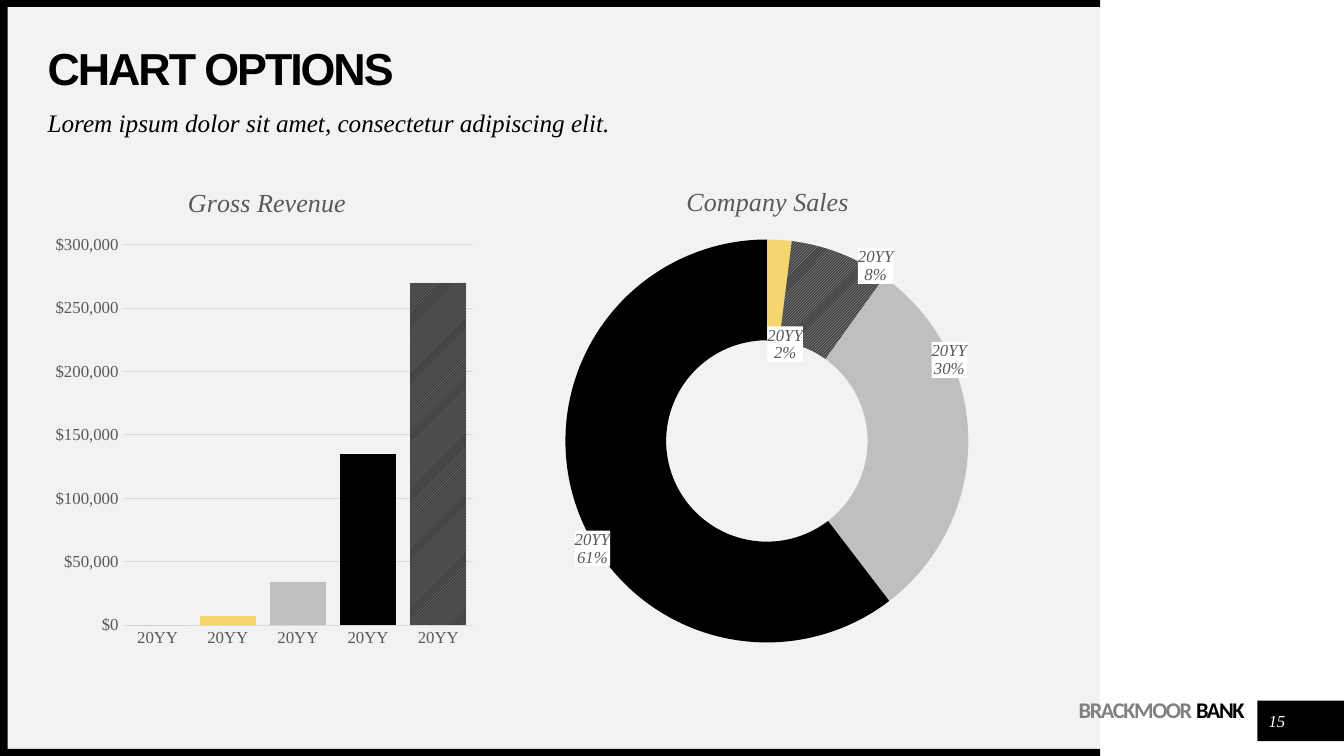
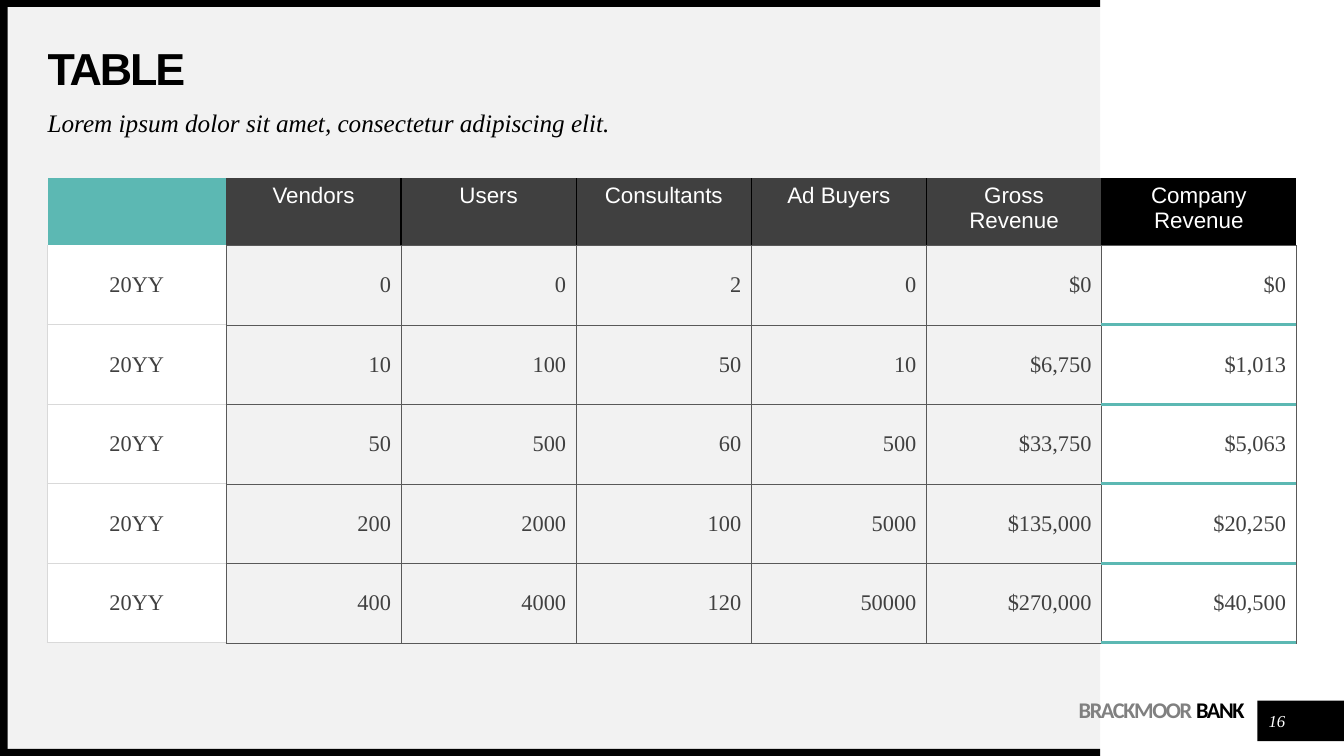
from typing import NamedTuple

from pptx import Presentation
from pptx import util as u
from pptx.chart import data
from pptx.dml.color import RGBColor
from pptx.enum import chart as charts
from pptx.enum import dml, shapes, text
from pptx.oxml import parse_xml
from pptx.oxml.ns import nsdecls, qn

SANS, SERIF, BRAND = "Arial", "Times New Roman", "Calibri"
BLACK, WHITE, PANEL, TEAL = "000000", "FFFFFF", "F2F2F2", "5CB8B3"
DARK, GREY, MID, RULE = "404040", "595959", "808080", "D9D9D9"
ROSE, YELLOW, SILVER = "D78189", "F5D66E", "BFBFBF"
LEFT, CENTER, RIGHT = text.PP_ALIGN.LEFT, text.PP_ALIGN.CENTER, text.PP_ALIGN.RIGHT
TOP, MIDDLE = text.MSO_ANCHOR.TOP, text.MSO_ANCHOR.MIDDLE
LEAD = "Lorem ipsum dolor sit amet, consectetur adipiscing elit."
YEARS = ["20YY"] * 5
NO_TABLE_STYLE = "{2D5ABB26-0587-4C30-8999-92F81FD0307C}"


class Area(NamedTuple):
    left: float
    top: float
    width: float
    height: float

    def points(self) -> list:
        return [u.Pt(length) for length in self]


class Band(NamedTuple):
    area: Area
    colour: str


class Hatch(NamedTuple):
    front: str
    back: str


class Border(NamedTuple):
    colour: str
    width: float


class ChartStyle(NamedTuple):
    kind: int
    title: str
    area: Area
    plot: Area  # fractions of the chart
    values: list
    number_format: str
    fills: list


BANDS = [
    Band(Area(5.5, 5, 780.3, 530), PANEL),
    Band(Area(898.2, 500.4, 61.8, 29), BLACK),
    Band(Area(0, 535, 785.8, 5), BLACK),
    Band(Area(0, 0, 785.8, 5), BLACK),
    Band(Area(0, 0, 5.5, 540), BLACK),
]

REVENUE = ChartStyle(
    charts.XL_CHART_TYPE.COLUMN_CLUSTERED, "Gross Revenue",
    Area(35, 119, 309.4, 348.5), Area(0.17, 0.16, 0.81, 0.78),
    [0, 7000, 34000, 135000, 270000], "[$$-409]#,##0",
    [ROSE, YELLOW, SILVER, BLACK, Hatch(MID, DARK)])
SALES = ChartStyle(
    charts.XL_CHART_TYPE.DOUGHNUT, "Company Sales",
    Area(387.8, 118.5, 320, 351), Area(0.05, 0.15, 0.9, 0.82),
    [0, 2, 8, 30, 61], r"0\%",
    [ROSE, YELLOW, Hatch(SILVER, DARK), SILVER, BLACK])
# Label shifts as fractions of the chart, by point
LABEL_SHIFTS = {1: (0.02, 0.11), 2: (0.12, -0.07), 3: (0.07, -0.16), 4: (-0.07, 0.12)}

HEADINGS = ["", "Vendors", "Users", "Consultants", "Ad Buyers",
            "Gross Revenue", "Company Revenue"]
ROWS = [
    HEADINGS,
    ["20YY", "0", "0", "2", "0", "$0", "$0"],
    ["20YY", "10", "100", "50", "10", "$6,750", "$1,013"],
    ["20YY", "50", "500", "60", "500", "$33,750", "$5,063"],
    ["20YY", "200", "2000", "100", "5000", "$135,000", "$20,250"],
    ["20YY", "400", "4000", "120", "50000", "$270,000", "$40,500"],
]
COLUMN_WIDTHS = [127.4] + [125.1] * 5 + [138.9]
ROW_HEIGHTS = [48] + [56.75] * 5
LAST = len(HEADINGS) - 1


# Text and fills
def rgb(colour: str) -> RGBColor:
    return RGBColor.from_string(colour)


def style(font, size: float, face: str, colour: str, bold=False, italic=False) -> None:
    font.size, font.name, font.bold, font.italic = u.Pt(size), face, bold, italic
    font.color.rgb = rgb(colour)


def write(para, words: str, *, size: float, face: str = SERIF, colour: str = BLACK,
          bold=False, italic=False, spacing: float = 0, align=LEFT) -> None:
    para.alignment = align
    span = para.add_run()
    span.text = words
    style(span.font, size, face, colour, bold, italic)
    if spacing:
        span.font._element.set("spc", str(int(spacing * 100)))


def add_text(page, area: Area, anchor=TOP, line=None, before: float = 0):
    frame = page.shapes.add_textbox(*area.points()).text_frame
    frame.margin_left = frame.margin_right = frame.margin_top = frame.margin_bottom = 0
    frame.word_wrap, frame.vertical_anchor = True, anchor
    para = frame.paragraphs[0]
    para.line_spacing, para.space_before = line, u.Pt(before)
    return para


def paint(fill, colour) -> None:
    if colour is None:
        fill.background()
    elif isinstance(colour, Hatch):
        fill.patterned()
        fill.pattern = dml.MSO_PATTERN.DARK_UPWARD_DIAGONAL
        fill.fore_color.rgb, fill.back_color.rgb = rgb(colour.front), rgb(colour.back)
    else:
        fill.solid()
        fill.fore_color.rgb = rgb(colour)


# Shared frame of every page
def add_page(deck, title: str, number: int):
    page = deck.slides.add_slide(deck.slide_layouts[6])
    for band in BANDS:
        box = page.shapes.add_shape(shapes.MSO_SHAPE.RECTANGLE, *band.area.points())
        box.shadow.inherit = False
        box.line.fill.background()
        paint(box.fill, band.colour)
    brand = add_text(page, Area(758, 502.6, 131, 28), line=u.Pt(14))
    for words, colour in (("BRACKMOOR ", MID), ("BANK", BLACK)):
        write(brand, words, size=16, face=BRAND, colour=colour, bold=True,
              spacing=-1, align=RIGHT)
    write(add_text(page, Area(34, 34, 724, 34), MIDDLE, 0.9), title,
          size=32, face=SANS, bold=True, spacing=-1.5)
    write(add_text(page, Area(34, 79, 724, 28), line=0.9, before=10), LEAD,
          size=18, italic=True)
    write(add_text(page, Area(901.4, 504, 21.6, 21.6), MIDDLE), str(number),
          size=12, colour=WHITE, italic=True, align=CENTER)
    return page


# Charts
def layout_xml(x: float, y: float, size: str = "", modes: str = "") -> str:
    return (f'<c:layout {nsdecls("c")}><c:manualLayout>{modes}'
            f'<c:x val="{x}"/><c:y val="{y}"/>{size}</c:manualLayout></c:layout>')


def set_layout(parent, index: int, x: float, y: float, size: str = "") -> None:
    for old in parent.findall(qn("c:layout")):
        parent.remove(old)
    target = '<c:layoutTarget val="inner"/>' if size else ""
    modes = target + '<c:xMode val="edge"/><c:yMode val="edge"/>'
    parent.insert(index, parse_xml(layout_xml(x, y, size, modes)))


def add_chart(page, look: ChartStyle):
    source = data.CategoryChartData(number_format=look.number_format)
    source.categories = YEARS
    source.add_series("Series 1", look.values)
    chart = page.shapes.add_chart(look.kind, *look.area.points(), source).chart
    chart.has_legend = False
    style(chart.font, 12, SERIF, GREY)
    chart.has_title = True
    write(chart.chart_title.text_frame.paragraphs[0], look.title,
          size=18.6, colour=GREY, italic=True, align=CENTER)
    set_layout(chart.chart_title._element, 1, 0.31, 0.03)
    plot = look.plot
    set_layout(chart._chartSpace.chart.plotArea, 0, plot.left, plot.top,
               f'<c:w val="{plot.width}"/><c:h val="{plot.height}"/>')
    series = chart.plots[0].series[0]
    for index, colour in enumerate(look.fills):
        look_of_point = series.points[index].format
        paint(look_of_point.fill, colour)
        look_of_point.line.fill.background()
    return chart


def style_line(line, colour: str) -> None:
    line.color.rgb, line.width = rgb(colour), u.Pt(0.75)


def add_revenue(page) -> None:
    chart = add_chart(page, REVENUE)
    chart.plots[0].gap_width = 25
    chart.plots[0].vary_by_categories = False
    for axis in (chart.category_axis, chart.value_axis):
        axis.major_tick_mark = axis.minor_tick_mark = charts.XL_TICK_MARK.NONE
        style(axis.tick_labels.font, 12, SERIF, GREY)
    style_line(chart.category_axis.format.line, RULE)
    amounts = chart.value_axis
    amounts.minimum_scale, amounts.maximum_scale, amounts.major_unit = 0, 300000, 50000
    amounts.tick_labels.number_format = REVENUE.number_format
    amounts.tick_labels.number_format_is_linked = False
    amounts.format.line.fill.background()
    style_line(amounts.major_gridlines.format.line, RULE)


def add_sales(page) -> None:
    chart = add_chart(page, SALES)
    chart._chartSpace.xpath("//c:holeSize")[0].set("val", "90")
    labels = chart.plots[0].series[0].data_labels
    labels.show_category_name = labels.show_value = True
    style(labels.font, 12, SERIF, GREY, italic=True)
    # No leader lines
    for old in labels._element.findall(qn("c:showLeaderLines")):
        labels._element.remove(old)
    labels._element.append(parse_xml(f'<c:showLeaderLines {nsdecls("c")} val="0"/>'))
    flags = "".join(
        f'<c:show{name} val="{shown}"/>' for name, shown in
        (("LegendKey", 0), ("Val", 1), ("CatName", 1), ("SerName", 0),
         ("Percent", 0), ("BubbleSize", 0)))
    font = (f'<a:defRPr sz="1200" i="1"><a:solidFill><a:srgbClr val="{GREY}"/></a:solidFill>'
            f'<a:latin typeface="{SERIF}"/></a:defRPr>')
    entries = ['<c:idx val="0"/><c:delete val="1"/>']
    for index, (x, y) in LABEL_SHIFTS.items():
        entries.append(
            f'<c:idx val="{index}"/>{layout_xml(x, y)}'
            f'<c:numFmt formatCode="{SALES.number_format}" sourceLinked="0"/>'
            f'<c:spPr><a:solidFill><a:srgbClr val="{WHITE}"/></a:solidFill></c:spPr>'
            f'<c:txPr><a:bodyPr/><a:p><a:pPr>{font}</a:pPr></a:p></c:txPr>'
            f'{flags}<c:separator>\n</c:separator>')
    for position, entry in enumerate(entries):
        label = parse_xml(f'<c:dLbl {nsdecls("c", "a")}>{entry}</c:dLbl>')
        labels._element.insert(position, label)


# Table
def borders_of(row: int, column: int) -> dict:
    thin, black = Border(GREY, 0.25), Border(BLACK, 1)
    pale, accent = Border(RULE, 1), Border(TEAL, 2.25)
    if row == 0:
        return {"L": black if column > 1 else None,
                "R": black if 0 < column < LAST else None,
                "T": None, "B": thin if column else None}
    if column == 0:
        return {"L": pale, "R": thin, "T": pale if row > 1 else None, "B": pale}
    if column == LAST:
        return {"L": thin, "R": thin, "T": accent if row > 1 else thin, "B": accent}
    return dict.fromkeys("LRTB", thin)


def fill_of(row: int, column: int):
    if row == 0:
        return {0: TEAL, LAST: BLACK}.get(column, DARK)
    return {0: WHITE, LAST - 1: PANEL}.get(column)


def set_borders(cell, borders: dict) -> None:
    props = cell._tc.get_or_add_tcPr()
    for position, (side, border) in enumerate(borders.items()):
        width = f' w="{int(u.Pt(border.width))}"' if border else ""
        ink = (f'<a:solidFill><a:srgbClr val="{border.colour}"/></a:solidFill>'
               if border else "<a:noFill/>")
        props.insert(position, parse_xml(
            f'<a:ln{side} {nsdecls("a")}{width}>{ink}</a:ln{side}>'))


def add_figures(page) -> None:
    area = Area(34, 127.3, sum(COLUMN_WIDTHS), sum(ROW_HEIGHTS))
    table = page.shapes.add_table(len(ROWS), len(HEADINGS), *area.points()).table
    table._tbl.tblPr.find(qn("a:tableStyleId")).text = NO_TABLE_STYLE
    table.horz_banding = False
    for column, width in zip(table.columns, COLUMN_WIDTHS):
        column.width = u.Pt(width)
    for row, (line, height) in enumerate(zip(ROWS, ROW_HEIGHTS)):
        table.rows[row].height = u.Pt(height)
        for column, words in enumerate(line):
            cell = table.cell(row, column)
            paint(cell.fill, fill_of(row, column))
            set_borders(cell, borders_of(row, column))
            cell.vertical_anchor = MIDDLE if row else TOP
            if words:
                write(cell.text_frame.paragraphs[0], words, size=16,
                      face=SERIF if row else SANS, colour=DARK if row else WHITE,
                      align=RIGHT if row and column else CENTER)


def main() -> None:
    deck = Presentation()
    deck.slide_width, deck.slide_height = u.Pt(960), u.Pt(540)
    chart_page = add_page(deck, "CHART OPTIONS", 15)
    add_revenue(chart_page)
    add_sales(chart_page)
    add_figures(add_page(deck, "TABLE", 16))
    deck.save("out.pptx")


if __name__ == "__main__":
    main()
